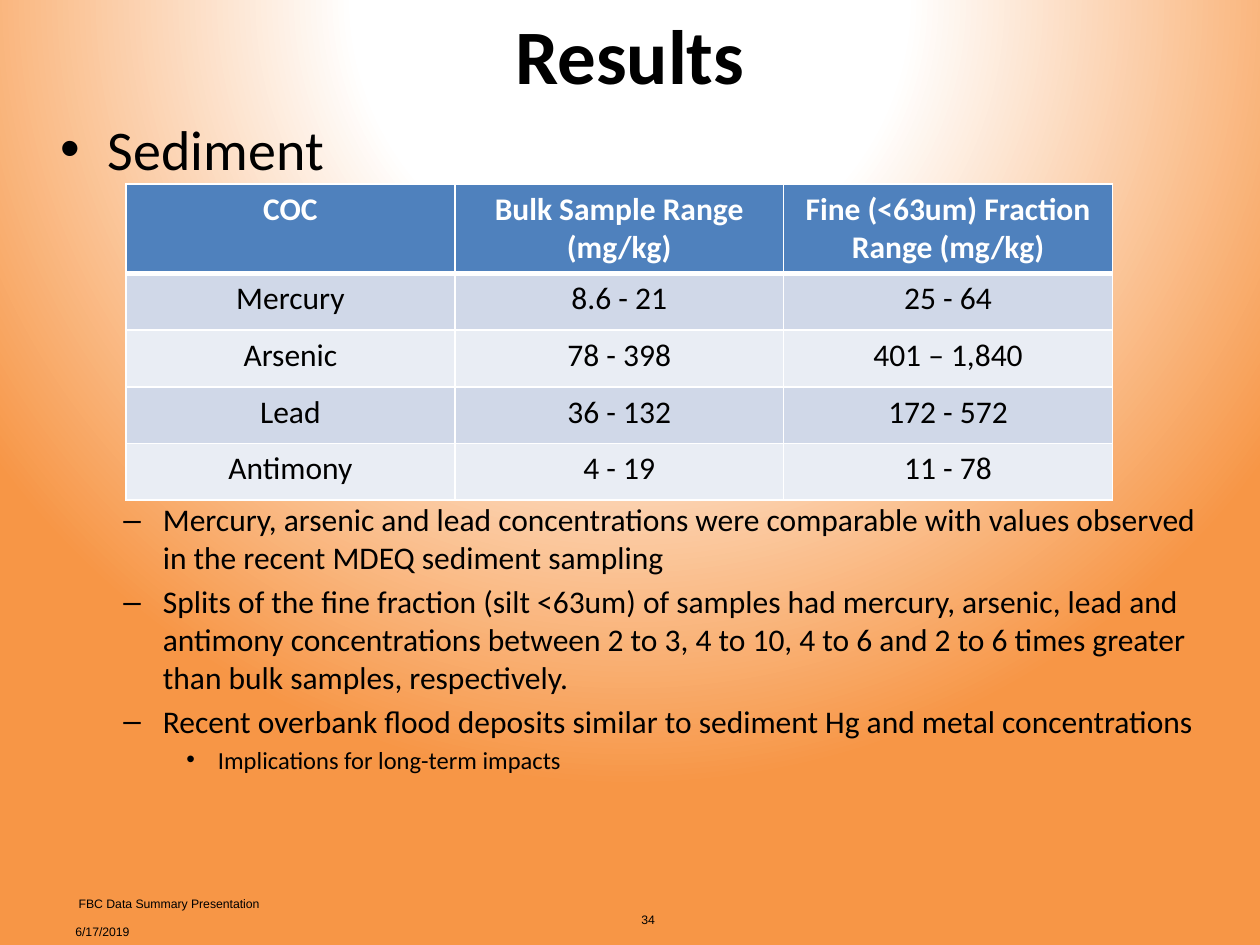
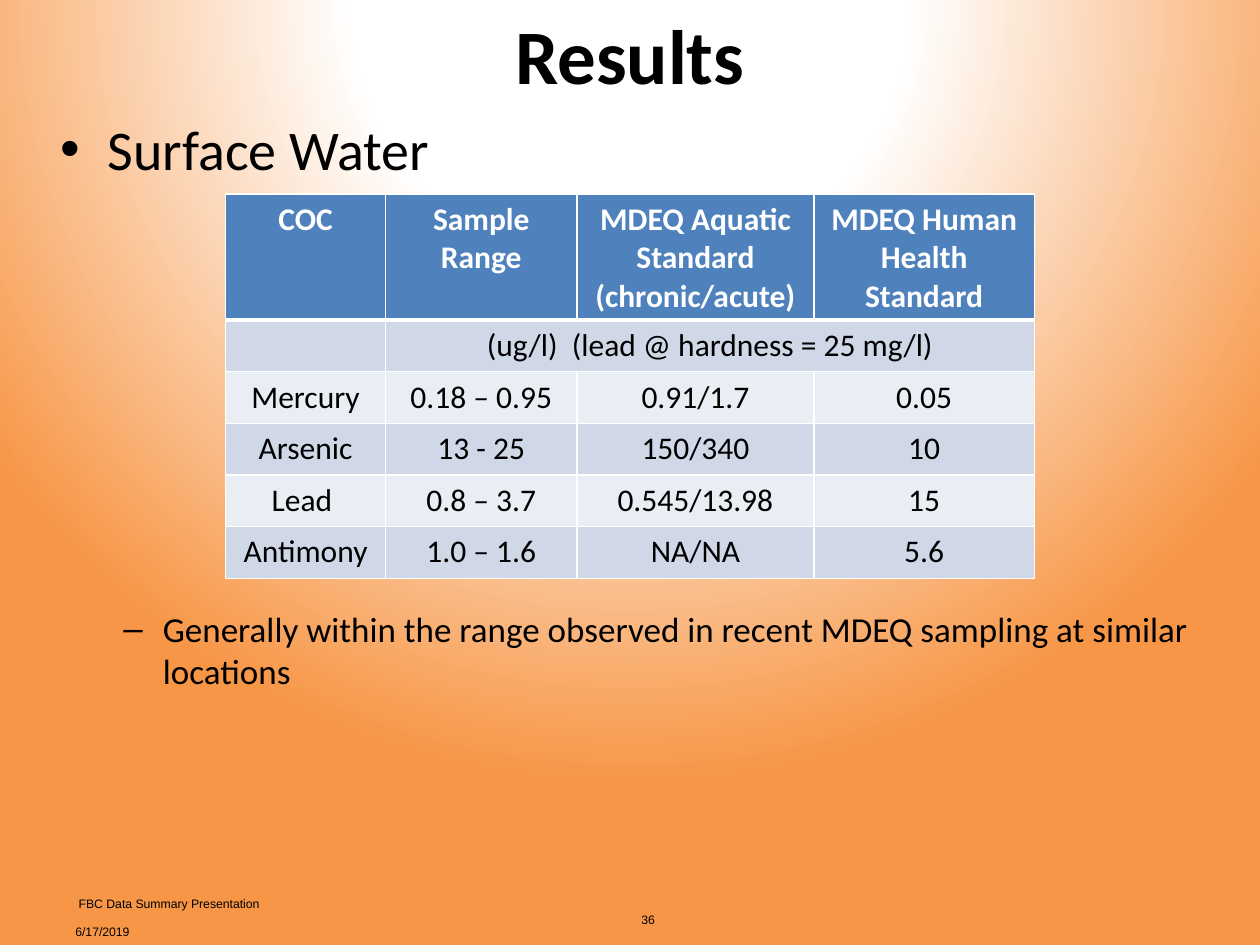
"""Build two results slides, each with a heading, a table and findings."""
from pptx import Presentation
from pptx.dml.color import RGBColor
from pptx.enum.text import MSO_ANCHOR as Anchor, MSO_AUTO_SIZE as AutoSize, PP_ALIGN as Align
from pptx.oxml import parse_xml
from pptx.oxml.ns import nsdecls
from pptx.util import Inches, Pt

BLACK, WHITE, ORANGE = "000000", "FFFFFF", "F79646"
HEADER_FILL = "4F81BD"
BAND_FILLS = ["D0D8E8", "E9EDF4"]
TEXT_FONT, FOOTER_FONT = "Calibri", "Arial"


def color(value):
    """Return the color for a hex string."""
    return RGBColor.from_string(value)


def format_font(paragraph, size, value=BLACK, bold=False, name=TEXT_FONT):
    """Set the font of a whole paragraph."""
    font = paragraph.font
    font.name, font.size, font.bold = name, Pt(size), bold
    font.color.rgb = color(value)


def place(shape, left, top, width, height):
    """Move and size a shape, in inches."""
    shape.left, shape.top = Inches(left), Inches(top)
    shape.width, shape.height = Inches(width), Inches(height)


def set_background(master):
    """Give the master a round gradient from white to orange."""
    master.background.fill.solid()
    stops = "".join(
        f'<a:gs pos="{position * 1000}"><a:srgbClr val="{value}"/></a:gs>'
        for position, value in [(0, WHITE), (35, WHITE), (100, ORANGE)]
    )
    gradient = parse_xml(
        f'<a:gradFill {nsdecls("a")} rotWithShape="1"><a:gsLst>{stops}</a:gsLst>'
        '<a:path path="circle">'
        '<a:fillToRect l="50000" t="-80000" r="50000" b="180000"/>'
        "</a:path></a:gradFill>"
    )
    properties = master.element.cSld.bg.bgPr
    properties.replace(properties[0], gradient)


def add_title(slide, text):
    """Fill and format the title placeholder."""
    title = slide.shapes.title
    place(title, 0.5, -0.2, 9, 1.25)
    title.text_frame.text = text
    title.text_frame.vertical_anchor = Anchor.MIDDLE
    paragraph = title.text_frame.paragraphs[0]
    paragraph.alignment = Align.CENTER
    format_font(paragraph, 44, bold=True)


def add_body(slide, heading, table_gap, findings):
    """Write the heading and the findings, leaving a gap in points for the table."""
    body = slide.placeholders[1]
    place(body, 0.38, 0.86, 9.25, 5.99)
    frame = body.text_frame
    frame.auto_size = AutoSize.NONE
    for index, (level, size, text) in enumerate([(0, 32, heading), *findings]):
        paragraph = frame.add_paragraph() if index else frame.paragraphs[0]
        paragraph.text = text
        paragraph.level = level
        spacing = {0: 0, 1: table_gap}.get(index, size * 0.2)
        paragraph.space_before = Pt(spacing)
        format_font(paragraph, size)


def add_borders(cell, widths):
    """Draw white cell borders, with widths in points by side."""
    properties = cell._tc.get_or_add_tcPr()
    for side in "LRTB":
        properties.append(parse_xml(
            f'<a:ln{side} {nsdecls("a")} w="{Pt(widths.get(side, 1))}">'
            f'<a:solidFill><a:srgbClr val="{WHITE}"/></a:solidFill></a:ln{side}>'
        ))


def format_cell(cell, row_index):
    """Format a cell as part of the header or of a band."""
    is_header = row_index == 0
    add_borders(cell, {0: {"B": 3}, 1: {"T": 3}}.get(row_index, {}))
    cell.fill.solid()
    fill = HEADER_FILL if is_header else BAND_FILLS[(row_index - 1) % 2]
    cell.fill.fore_color.rgb = color(fill)
    for paragraph in cell.text_frame.paragraphs:
        paragraph.alignment = Align.CENTER
        format_font(paragraph, 18, WHITE if is_header else BLACK, is_header)


def add_results_table(slide, left, top, column_widths, header_height, row_height, rows):
    """Add a results table and return it."""
    heights = [header_height] + [row_height] * (len(rows) - 1)
    table = slide.shapes.add_table(
        len(rows), len(column_widths), Inches(left), Inches(top),
        Inches(sum(column_widths)), Inches(sum(heights)),
    ).table
    for column, width in zip(table.columns, column_widths):
        column.width = Inches(width)
    for row_index, values in enumerate(rows):
        table.rows[row_index].height = Inches(heights[row_index])
        for column_index, value in enumerate(values):
            cell = table.cell(row_index, column_index)
            cell.text = value
            format_cell(cell, row_index)
    return table


def add_footer_text(slide, text, left, top, width, height, alignment=Align.LEFT):
    """Add one small footer text box."""
    box = slide.shapes.add_textbox(0, 0, 0, 0)
    place(box, left, top, width, height)
    frame = box.text_frame
    frame.word_wrap = True
    frame.vertical_anchor = Anchor.MIDDLE
    paragraph = frame.paragraphs[0]
    paragraph.text = text
    paragraph.alignment = alignment
    format_font(paragraph, 7, name=FOOTER_FONT)


def add_results_slide(presentation, number, heading, table_gap, findings):
    """Add a slide with the shared title, body and footers."""
    slide = presentation.slides.add_slide(presentation.slide_layouts[1])
    add_title(slide, "Results")
    add_body(slide, heading, table_gap, findings)
    add_footer_text(slide, number, 3.98, 7.1, 2.33, 0.4, Align.CENTER)
    add_footer_text(slide, "6/17/2019", 0.5, 7.28, 2.33, 0.22)
    add_footer_text(slide, " FBC Data Summary Presentation", 0.5, 7.06, 3.17, 0.23)
    return slide


def add_sediment_slide(presentation):
    """Add the sediment results."""
    slide = add_results_slide(presentation, "34", "Sediment", 182, [
        (1, 18, "Mercury, arsenic and lead concentrations were comparable with values "
                "observed in the recent MDEQ sediment sampling"),
        (1, 18, "Splits of the fine fraction (silt <63um) of samples had mercury, arsenic, "
                "lead and antimony concentrations between 2 to 3, 4 to 10, 4 to 6 and "
                "2 to 6 times greater than bulk samples, respectively."),
        (1, 18, "Recent overbank flood deposits similar to sediment Hg and metal "
                "concentrations"),
        (2, 14, "Implications for long-term impacts"),
    ])
    add_results_table(slide, 1, 1.46, [2.61] * 3, 0.71, 0.45, [
        ["COC", "Bulk Sample Range\n(mg/kg)", "Fine (<63um) Fraction Range (mg/kg)"],
        ["Mercury", "8.6 - 21", "25 - 64"],
        ["Arsenic", "78 - 398", "401 – 1,840"],
        ["Lead", "36 - 132", "172 - 572"],
        ["Antimony", "4 - 19", "11 - 78"],
    ])


def add_surface_water_slide(presentation):
    """Add the surface water results."""
    slide = add_results_slide(presentation, "36", "Surface Water", 243, [
        (1, 20, "Generally within the range observed in recent MDEQ sampling at similar "
                "locations"),
    ])
    table = add_results_table(slide, 1.79, 1.54, [1.27, 1.52, 1.88, 1.75], 1, 0.41, [
        ["COC", "Sample\nRange", "MDEQ Aquatic Standard (chronic/acute)",
         "MDEQ Human Health Standard"],
        ["", "(ug/l)  (lead @ hardness = 25 mg/l)", "", ""],
        ["Mercury", "0.18 – 0.95", "0.91/1.7", "0.05"],
        ["Arsenic", "13 - 25", "150/340", "10"],
        ["Lead ", "0.8 – 3.7", "0.545/13.98", "15"],
        ["Antimony", "1.0 – 1.6", "NA/NA", "5.6"],
    ])
    table.cell(1, 1).merge(table.cell(1, 3))


def main():
    """Build and save the presentation."""
    presentation = Presentation()
    presentation.slide_width, presentation.slide_height = Inches(10), Inches(7.5)
    set_background(presentation.slide_master)
    add_sediment_slide(presentation)
    add_surface_water_slide(presentation)
    presentation.save("out.pptx")


if __name__ == "__main__":
    main()
